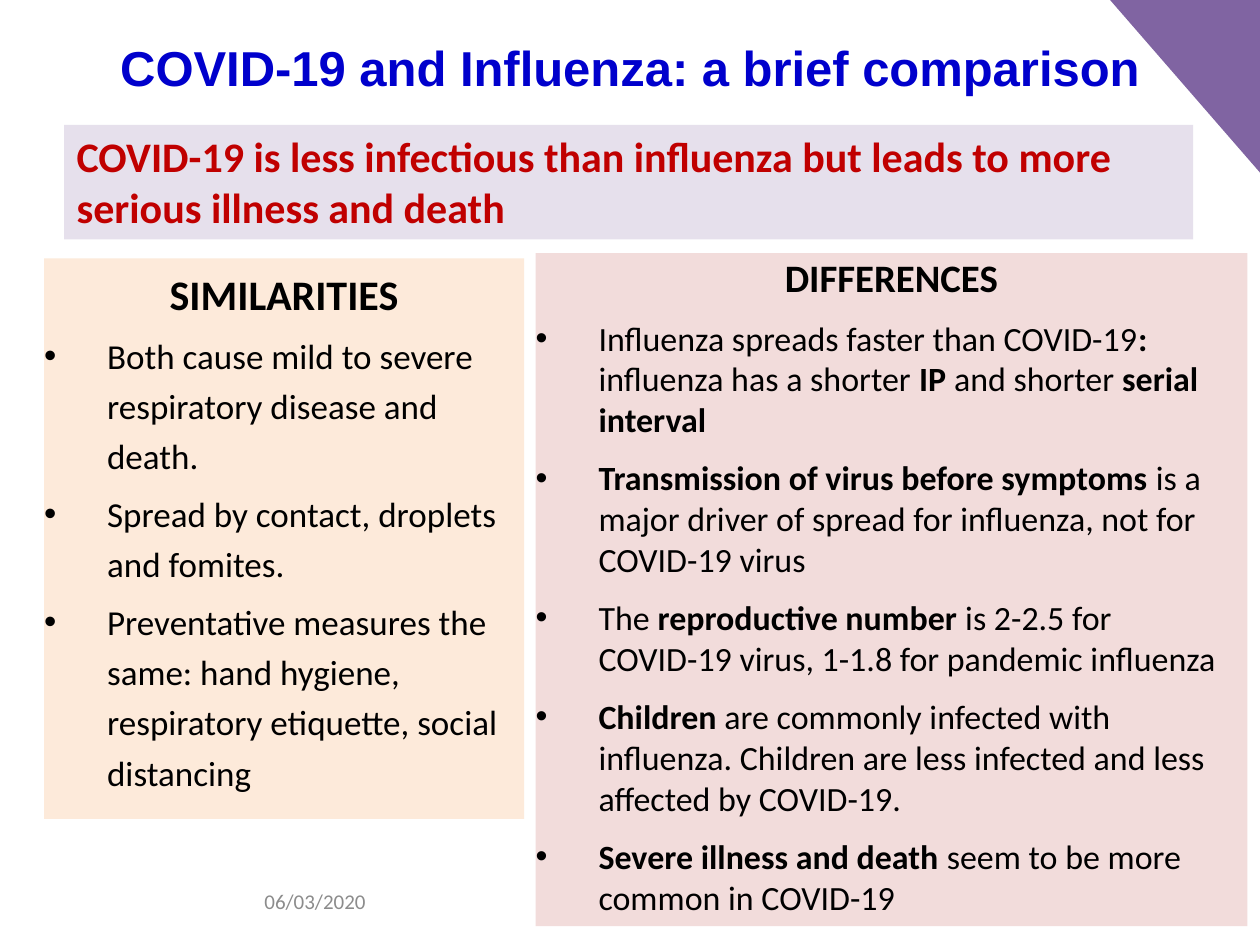
from lxml import etree
from pptx import Presentation
from pptx import util as u
from pptx.dml.color import RGBColor
from pptx.enum import shapes, text
from pptx.oxml.ns import qn

WIDTH, HEIGHT = 10, 7.5
BLACK = "000000"
SIMILARITIES = [
    "Both cause mild to severe respiratory disease and death.",
    "Spread by contact, droplets and fomites.",
    "Preventative measures the same: hand hygiene, respiratory etiquette, social distancing",
]
DIFFERENCES = [
    "Influenza spreads faster than COVID-19**: **influenza has a shorter **IP **and shorter **serial interval**",
    "**Transmission of virus before symptoms **is a major driver of spread for influenza, not for COVID-19 virus",
    "The **reproductive number **is 2-2.5 for COVID-19 virus, 1-1.8 for pandemic influenza",
    "**Children** are commonly infected with influenza. Children are less infected and less affected by COVID-19.",
    "**Severe illness and death **seem to be more common in COVID-19",
]


def rgb(value):
    """Turn a hex string into a colour."""
    return RGBColor.from_string(value)


def style(font, size, color, bold=False, name="Calibri"):
    """Set the look of a font."""
    font.name, font.size, font.bold = name, u.Pt(size), bold
    font.color.rgb = rgb(color)


def paint(shape, color):
    """Give a shape a plain fill without line or shadow."""
    shape.shadow.inherit = False
    shape.fill.solid()
    shape.fill.fore_color.rgb = rgb(color)
    shape.line.fill.background()


def set_frame(frame, anchor, insets=(0.1, 0.05, 0.1, 0.05)):
    """Set wrapping, anchor and insets of a text frame."""
    frame.word_wrap, frame.vertical_anchor = True, anchor
    (frame.margin_left, frame.margin_top,
     frame.margin_right, frame.margin_bottom) = map(u.Inches, insets)


def add_panel(slide, box, color, insets=(0, 0, 0, 0)):
    """Add a filled rectangle and return its text frame."""
    panel = slide.shapes.add_shape(shapes.MSO_SHAPE.RECTANGLE, *map(u.Inches, box))
    paint(panel, color)
    set_frame(panel.text_frame, text.MSO_ANCHOR.TOP, insets)
    return panel.text_frame


def add_bullet(frame, content, size, spacing, gap):
    """Add a bulleted paragraph with **bold** parts."""
    item = frame.add_paragraph()
    props = item._p.get_or_add_pPr()
    props.set("marL", str(u.Inches(0.5)))
    props.set("indent", str(-u.Inches(0.5)))
    etree.SubElement(props, qn("a:buFont")).set("typeface", "Arial")
    etree.SubElement(props, qn("a:buChar")).set("char", "•")
    item.alignment = text.PP_ALIGN.LEFT
    item.line_spacing, item.space_before = spacing, u.Pt(gap)
    for index, part in enumerate(content.split("**")):
        if part:
            run = item.add_run()
            run.text = part
            style(run.font, size, BLACK, bold=index % 2 == 1)


def add_list(slide, box, color, heading, heading_size, items, size, spacing, gap):
    """Add a panel with a centred heading and bullets."""
    frame = add_panel(slide, box, color)
    frame.text = heading
    title = frame.paragraphs[0]
    title.alignment, title.line_spacing = text.PP_ALIGN.CENTER, spacing
    style(title.runs[0].font, heading_size, BLACK, bold=True)
    for content in items:
        add_bullet(frame, content, size, spacing, gap)


def add_corner(slide):
    """Add the triangle in the top right corner."""
    builder = slide.shapes.build_freeform(u.Inches(8.81), 0)
    builder.add_line_segments([(u.Inches(WIDTH), 0), (u.Inches(WIDTH), u.Inches(1.37))])
    paint(builder.convert_to_shape(), "8064A2")


def set_title(slide, content):
    """Place and format the slide title."""
    title = slide.shapes.title
    title.left, title.top, title.width, title.height = map(u.Inches, (0, -0.33, WIDTH, 1.31))
    title.text_frame.text = content
    set_frame(title.text_frame, text.MSO_ANCHOR.TOP, (0.75, 0.63, 0.75, 0.2))
    heading = title.text_frame.paragraphs[0]
    heading.alignment = text.PP_ALIGN.CENTER
    style(heading.runs[0].font, 28, "0000CC", bold=True, name="Arial")


def add_date(slide, content):
    """Add the date at the foot of the slide."""
    frame = slide.shapes.add_textbox(*map(u.Inches, (2, 6.95, 2.25, 0.4))).text_frame
    frame.text = content
    set_frame(frame, text.MSO_ANCHOR.MIDDLE)
    style(frame.paragraphs[0].runs[0].font, 12, "8C8C8C")


def add_message(slide, content):
    """Add the banner with the key message."""
    frame = add_panel(slide, (0.51, 0.99, 8.96, 0.91), "E6E0EC", (0.1, 0.05, 0.1, 0.05))
    frame.text = content
    message = frame.paragraphs[0]
    message.alignment = text.PP_ALIGN.LEFT
    style(message.runs[0].font, 24, "C00000", bold=True)


def main():
    """Build the slide and save it."""
    deck = Presentation()
    deck.slide_width, deck.slide_height = u.Inches(WIDTH), u.Inches(HEIGHT)
    slide = deck.slides.add_slide(deck.slide_layouts[5])
    add_corner(slide)
    set_title(slide, "COVID-19 and Influenza: a brief comparison")
    add_date(slide, "06/03/2020")
    add_list(slide, (0.35, 2.05, 3.81, 4.45), "FDEADA", "SIMILARITIES", 24,
             SIMILARITIES, 20, 1.2, 4)
    add_list(slide, (4.25, 2.01, 5.65, 5.34), "F2DCDB", "DIFFERENCES", 22.2,
             DIFFERENCES, 19.4, 1.0, 10)
    add_message(slide, "COVID-19 is less infectious than influenza but leads to more "
                       "serious illness and death")
    deck.save("out.pptx")


if __name__ == "__main__":
    main()
